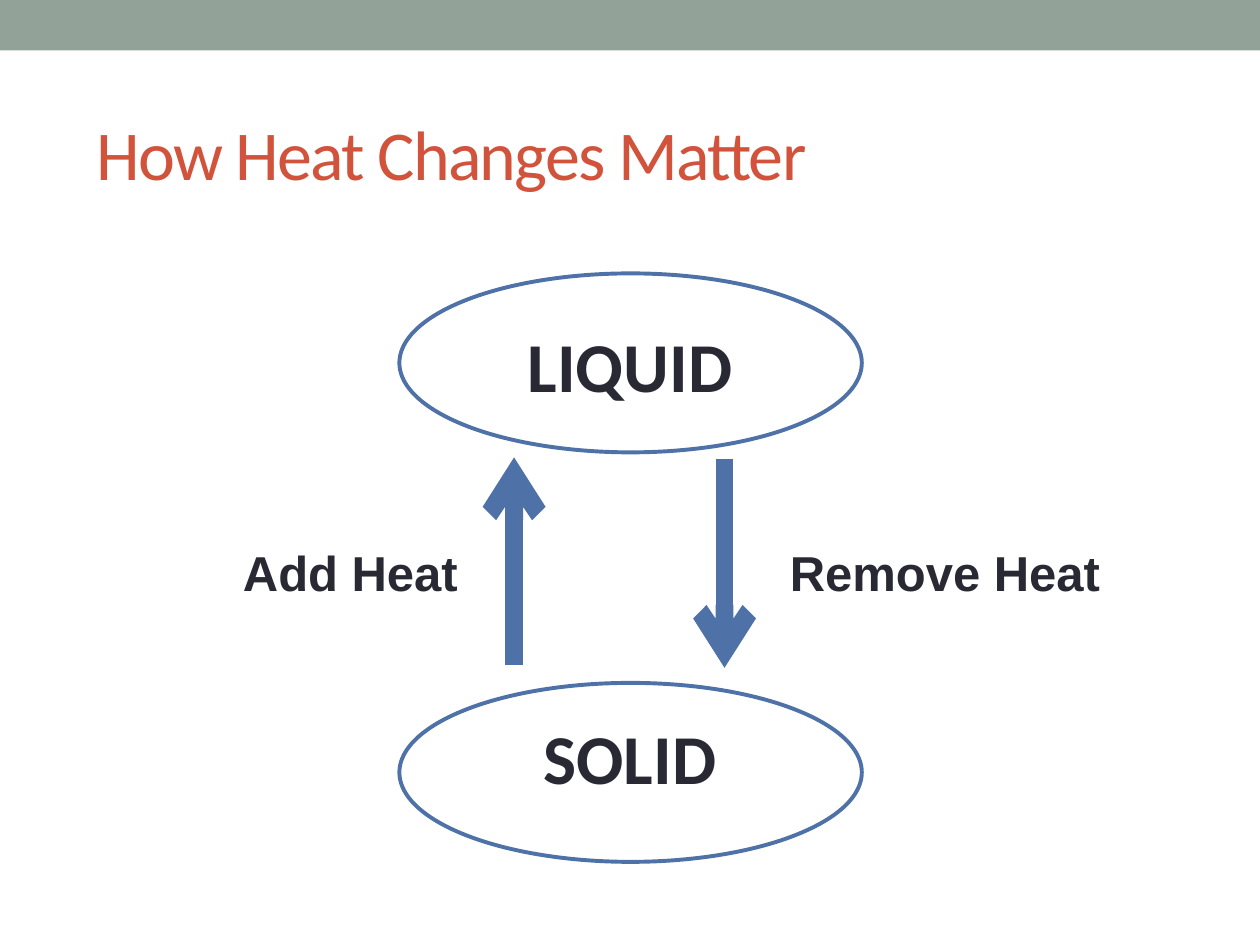
from lxml.etree import SubElement as Sub
from pptx import Presentation
from pptx.dml.color import RGBColor as RGB
from pptx.enum.shapes import MSO_CONNECTOR as Conn, MSO_SHAPE as Geo
from pptx.enum.text import MSO_ANCHOR as Anchor, PP_ALIGN as Align
from pptx.oxml.ns import qn
from pptx.util import Inches, Pt


def hue(code):
    return RGB.from_string(code)


class Deck:
    band, head, ink, blue = "93A299", "D2533C", "292934", "4E72A8"

    def __init__(self):
        self.prs = Presentation()
        self.prs.slide_width, self.prs.slide_height = Inches(10), Inches(7.5)
        self.slide = self.prs.slides.add_slide(self.prs.slide_layouts[6])

    def shape(self, kind, box, fill=None, line=None):
        item = self.slide.shapes.add_shape(kind, *map(Inches, box))
        item.shadow.inherit = False
        if fill:
            item.fill.solid()
            item.fill.fore_color.rgb = hue(fill)
        else:
            item.fill.background()
        if line:
            item.line.color.rgb = hue(line)
            item.line.width = Pt(2.25)
        else:
            item.line.fill.background()

    def text(self, words, box, size, font, color=ink, bold=True,
             align=Align.LEFT, anchor=Anchor.TOP, top=0.05, gap=0, track=0):
        frame = self.slide.shapes.add_textbox(*map(Inches, box)).text_frame
        frame.word_wrap = True
        frame.vertical_anchor = anchor
        frame.margin_top = Inches(top)
        frame.text = words
        for num, para in enumerate(frame.paragraphs):
            para.alignment = align
            if num:
                para.space_before = Pt(gap)
            for run in para.runs:
                run.font.name, run.font.size = font, Pt(size)
                run.font.bold = bold
                run.font.color.rgb = hue(color)
                if track:
                    run._r.get_or_add_rPr().set("spc", str(track))

    def arrow(self, x, start, end):
        ends = map(Inches, (x, start, x, end))
        item = self.slide.shapes.add_connector(Conn.STRAIGHT, *ends)
        item.line.color.rgb = hue(self.blue)
        item.line.width = Pt(10.25)
        props = item._element.spPr
        Sub(props.find(qn("a:ln")), qn("a:tailEnd"), type="arrow")
        Sub(props, qn("a:effectLst"))

    def save(self):
        self.prs.save("out.pptx")


def main():
    deck = Deck()
    deck.shape(Geo.RECTANGLE, (0, 0, 10, 0.4), fill=deck.band)
    deck.text("How Heat Changes Matter", (0.67, 0.67, 9, 1.08), 40, "Calibri",
              deck.head, bold=False, anchor=Anchor.MIDDLE, track=-100)
    deck.text("LIQUID\nSOLID", (0.5, 1.75, 9, 5.33), 40, "Calibri",
              align=Align.CENTER, top=0.81, gap=176)
    for top in (2.17, 5.42):
        deck.shape(Geo.OVAL, (3.17, top, 3.67, 1.42), line=deck.blue)
    deck.arrow(5.75, 3.64, 5.3)
    deck.arrow(4.08, 5.28, 3.63)
    for words, left, width in (("Add Heat", 1.83, 2.5),
                               ("Remove Heat", 6.17, 2.92)):
        deck.text(words, (left, 4.26, width, 0.57), 28, "Arial")
    deck.save()


if __name__ == "__main__":
    main()
